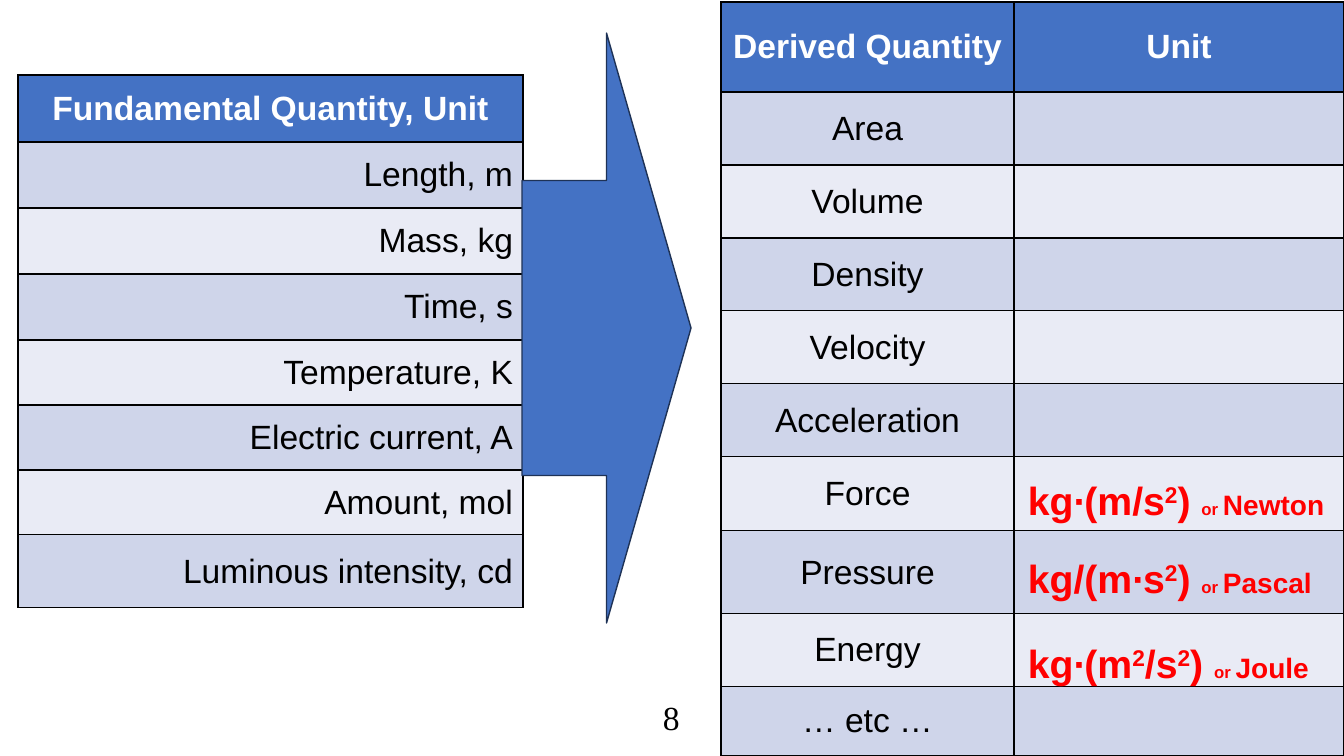
import lxml.etree
import pptx
import pptx.dml.color
import pptx.enum.shapes
import pptx.enum.text
import pptx.oxml.ns
import pptx.util

PX = 914400 / 100.8
COLORS = {
    "header": "4472C4", "dark_band": "CFD5EA", "light_band": "E9EBF5",
    "outline": "1E3256", "black": "000000", "white": "FFFFFF", "red": "FF0000",
}
RGB = {name: pptx.dml.color.RGBColor.from_string(code) for name, code in COLORS.items()}
ALIGN = pptx.enum.text.PP_ALIGN
qn = pptx.oxml.ns.qn


def style(span, size, color, bold=False, font="Arial"):
    span.font.name = font
    span.font.size = pptx.util.Pt(size)
    span.font.bold = bold
    span.font.color.rgb = RGB[color]


def build_table(left, top, widths, heights, rows, align, spare_column=False):
    """Banded table; a spare column keeps only its left border and no fill."""
    frame = page.shapes.add_table(
        len(rows), len(widths), *(round(n * PX) for n in (left, top, sum(widths), sum(heights))))
    table = frame.table
    for column, width in zip(table.columns, widths):
        column.width = round(width * PX)
    for r, texts in enumerate(rows):
        table.rows[r].height = round(heights[r] * PX)
        band = "header" if r == 0 else ("dark_band" if r % 2 else "light_band")
        for c, text in enumerate(texts):
            cell = table.cell(r, c)
            spare = spare_column and c == len(widths) - 1
            # Borders
            props = cell._tc.get_or_add_tcPr()
            for side in ("lnL", "lnR", "lnT", "lnB"):
                line = lxml.etree.SubElement(props, qn("a:" + side), w="12700")
                if spare and side != "lnL":
                    lxml.etree.SubElement(line, qn("a:noFill"))
                else:
                    fill = lxml.etree.SubElement(line, qn("a:solidFill"))
                    lxml.etree.SubElement(fill, qn("a:srgbClr"), val=COLORS["black"])
            # Fill and text
            if spare:
                cell.fill.background()
            else:
                cell.fill.solid()
                cell.fill.fore_color.rgb = RGB[band]
            cell.vertical_anchor = pptx.enum.text.MSO_ANCHOR.MIDDLE
            if text:
                cell.text_frame.text = text
                para = cell.text_frame.paragraphs[0]
                para.alignment = ALIGN.CENTER if r == 0 else align
                style(para.runs[0], 24, "black" if r else "white", bold=r == 0)


deck = pptx.Presentation()
deck.slide_width, deck.slide_height = round(1344 * PX), round(756 * PX)
page = deck.slides.add_slide(deck.slide_layouts[6])

# Fundamental quantities
fundamental = ["Fundamental Quantity, Unit", "Length, m", "Mass, kg", "Time, s",
               "Temperature, K", "Electric current, A", "Amount, mol",
               "Luminous intensity, cd"]
build_table(18, 75, [505, 213], [67] + [66] * 3 + [65] * 3 + [73],
            [(name, "") for name in fundamental], ALIGN.RIGHT, spare_column=True)

# Arrow from fundamental to derived
arrow = page.shapes.add_shape(
    pptx.enum.shapes.MSO_SHAPE.RIGHT_ARROW, *(round(n * PX) for n in (522, 33, 169, 590)))
arrow.shadow.inherit = False
arrow.fill.solid()
arrow.fill.fore_color.rgb = RGB["header"]
arrow.line.color.rgb = RGB["outline"]
arrow.line.width = pptx.util.Pt(1)

# Derived quantities
derived = ["Area", "Volume", "Density", "Velocity", "Acceleration", "Force",
           "Pressure", "Energy", "… etc …"]
build_table(721, 2, [293, 330], [90] + [73] * 5 + [74, 83, 73, 69],
            [("Derived Quantity", "Unit")] + [(name, "") for name in derived], ALIGN.CENTER)

# Derived units: the pieces between carets alternate normal and superscript
units = [(471, "kg∙(m/s^2^) ", "Newton"),
         (549, "kg/(m∙s^2^) ", "Pascal"),
         (634, "kg∙(m^2^/s^2^) ", "Joule")]
for top, formula, unit_name in units:
    box = page.shapes.add_textbox(*(round(n * PX) for n in (1018, top, 325, 57)))
    box.text_frame.word_wrap = True
    para = box.text_frame.paragraphs[0]
    pieces = [(text, 28, i % 2) for i, text in enumerate(formula.split("^"))]
    for text, size, raised in pieces + [("or ", 12, 0), (unit_name, 20, 0)]:
        span = para.add_run()
        span.text = text
        style(span, size, "red", bold=True)
        if raised:
            span._r.get_or_add_rPr().set("baseline", "30000")

# Page number
box = page.shapes.add_textbox(*(round(n * PX) for n in (653, 692, 37, 50)))
box.text_frame.text = "8"
style(box.text_frame.paragraphs[0].runs[0], 24, "black", font="Times New Roman")

deck.save("out.pptx")
